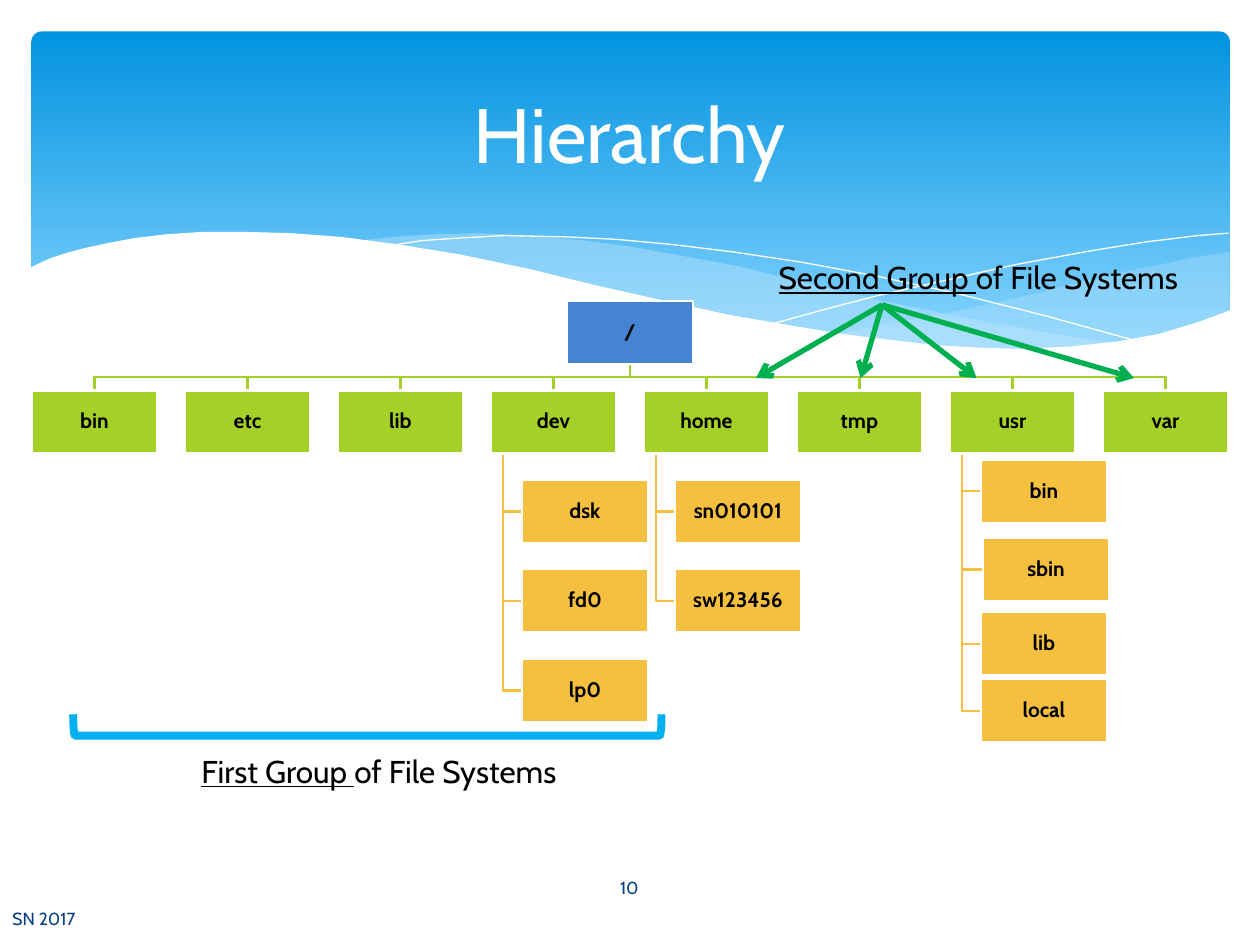
"""Build the file system hierarchy slide."""
from lxml import etree
from pptx import Presentation
from pptx.dml import color
from pptx.enum import shapes, text
from pptx.oxml import ns
from pptx.util import Pt

FONT = "Cabin"
BLACK, WHITE, NAVY = "000000", "FFFFFF", "073E87"
PALE, ROOT, GREEN, AMBER = "C6E7FC", "4584D3", "A5D028", "F5C040"
BRACKET, ARROW = "00B0F0", "00B050"
BOX_W, BOX_H = 72, 36
ROOT_LEFT, ROOT_TOP = 324, 172.1
ROW_LEFT, ROW_TOP, ROW_PITCH = 18, 223.2, 612 / 7
TRUNK_INSET, CHILD_INSET = 7.2, 18

EVEN_TOPS = [274.3, 325.4, 376.6]
DIRECTORIES = {
    "bin": [], "etc": [], "lib": [],
    "dev": list(zip(["dsk", "fd0", "lp0"], EVEN_TOPS)),
    "home": list(zip(["sn010101", "sw123456"], EVEN_TOPS)),
    "tmp": [],
    "usr": [("bin", 262.8), ("sbin", 307.4), ("lib", 349.9), ("local", 388.1)],
    "var": [],
}

RIGHT_SWELL = [
    (702.7, 144), (682.6, 146.9), (663.1, 151.2), (641.5, 155.5), (619.9, 160.6),
    (579.6, 170.6), (542.2, 178.6), (508.3, 185), (475.9, 190.8), (497.5, 193.7),
    (517.7, 195.8), (545, 198.7), (578.2, 200.2), (607.7, 199.4), (634.3, 196.6),
    (657.4, 192.2), (678.2, 186.5), (693.4, 181.4), (702.7, 177.8)]
MIDDLE_SWELL = [
    (643, 196.6), (602.6, 190.8), (558, 182.9), (508.3, 172.8), (452.9, 159.8),
    (420.5, 151.9), (389.5, 146.2), (361.4, 141.1), (334.8, 137.5), (302.4, 134.6),
    (273.6, 133.2), (247.7, 133.9), (225.4, 135.4), (205.9, 137.5), (232.6, 141.1),
    (260.6, 146.2), (290.9, 151.9), (323.3, 159.8), (381.6, 172.8), (432.7, 183.6),
    (468, 190.1), (500.4, 194.4), (529.9, 198), (556.6, 199.4), (581, 200.2),
    (603.4, 200.2), (624.2, 198.7)]
FALLING_CREST = [
    (222.5, 140.4), (241.2, 137.5), (261.4, 136.1), (288.7, 134.6), (324, 135.4),
    (352.1, 136.8), (383.8, 139.7), (419, 144), (457.9, 149.8), (500.4, 157.7),
    (547.2, 167.8), (598.3, 180.7), (653, 195.8)]
RISING_CREST = [
    (441.4, 185), (470.2, 177.1), (500.4, 169.2), (538.6, 160.6), (580.3, 151.2),
    (623.5, 143.3), (655.2, 138.2), (684.7, 134.6), (702, 133.2)]
WHITE_WAVE = [
    (703.4, 177.1), (684, 184.3), (662.4, 190.8), (638.6, 195.1), (612, 198),
    (582.5, 199.4), (560.2, 198.7), (535.7, 197.3), (509.8, 194.4), (481, 190.8),
    (450.7, 185.8), (416.9, 180), (380.9, 172.1), (342, 163.4), (301, 153.4),
    (262.8, 145.4), (227.5, 139.7), (195.1, 135.4), (165.6, 133.2), (139, 132.5),
    (115.9, 132.5), (95, 133.9), (76.3, 136.1), (61.2, 139), (48.2, 141.8),
    (37.4, 144.7), (28.8, 147.6), (20.9, 151.2), (16.6, 153.4), (16.6, 236.9),
    (703.4, 236.9)]


def rgb(value):
    return color.RGBColor.from_string(value)


def write(frame, words, size=12, ink=BLACK, bold=False, align="LEFT",
          anchor="MIDDLE", lead="", spacing=None):
    """Fill a text frame, with an optional underlined lead before the words."""
    frame.vertical_anchor = getattr(text.MSO_ANCHOR, anchor)
    paragraph = frame.paragraphs[0]
    paragraph.alignment = getattr(text.PP_ALIGN, align)
    paragraph.line_spacing = spacing
    for part, underlined in ((lead, True), (words, False)):
        if part:
            run = paragraph.add_run()
            run.text = part
            font = run.font
            font.name, font.size, font.bold = FONT, Pt(size), bold
            font.underline = underlined
            font.color.rgb = rgb(ink)


class Canvas:
    """Hold the slide and draw each kind of element on it."""

    def __init__(self, slide):
        self.slide = slide
        self.shapes = slide.shapes

    def finish(self, shape, fill=None, line=None, weight=1.25, alpha=None):
        shape.shadow.inherit = False
        if fill:
            shape.fill.solid()
            shape.fill.fore_color.rgb = rgb(fill)
        else:
            shape.fill.background()
        if alpha:
            tint = shape.fill._xPr.find(".//" + ns.qn("a:srgbClr"))
            etree.SubElement(tint, ns.qn("a:alpha"), val=str(alpha * 1000))
        if line:
            shape.line.color.rgb = rgb(line)
            shape.line.width = Pt(weight)
        else:
            shape.line.fill.background()
        return shape

    def preset(self, kind, left, top, width, height, **style):
        shape = self.shapes.add_shape(
            getattr(shapes.MSO_SHAPE, kind), Pt(left), Pt(top), Pt(width), Pt(height))
        return self.finish(shape, **style)

    def outline(self, points, close=False, **style):
        start, *rest = [(Pt(x), Pt(y)) for x, y in points]
        builder = self.shapes.build_freeform(*start)
        builder.add_line_segments(rest, close=close)
        return self.finish(builder.convert_to_shape(), **style)

    def box(self, label, left, top, fill):
        frame = self.preset("RECTANGLE", left, top, BOX_W, BOX_H,
                            fill=fill, line=WHITE).text_frame
        frame.margin_left = frame.margin_right = Pt(0.7)
        frame.margin_top = frame.margin_bottom = Pt(0.7)
        frame.word_wrap = True
        write(frame, label, bold=True, align="CENTER", spacing=0.9)

    def caption(self, words, left, top, width, height=29, wrap=True, **style):
        frame = self.shapes.add_textbox(
            Pt(left), Pt(top), Pt(width), Pt(height)).text_frame
        frame.word_wrap = wrap
        write(frame, words, **style)

    def title(self, words, left, top, width, height):
        title = self.shapes.title
        title.left, title.top = Pt(left), Pt(top)
        title.width, title.height = Pt(width), Pt(height)
        write(title.text_frame, words, size=44, ink=WHITE, align="CENTER")
        self.shapes._spTree.append(title._element)

    def arrow(self, start, end):
        ends = [Pt(value) for value in (*start, *end)]
        arrow = self.shapes.add_connector(shapes.MSO_CONNECTOR.STRAIGHT, *ends)
        arrow.line.color.rgb = rgb(ARROW)
        arrow.line.width = Pt(3)
        etree.SubElement(arrow.line._get_or_add_ln(), ns.qn("a:tailEnd"), type="arrow")
        etree.SubElement(arrow._element.spPr, ns.qn("a:effectLst"))


def draw_banner(canvas):
    banner = canvas.preset("ROUNDED_RECTANGLE", 18, 18, 684.7, 194.4)
    banner.adjustments[0] = 0.03
    banner.fill.gradient()
    banner.fill.gradient_angle = 270
    for stop, (place, tint) in zip(banner.fill.gradient_stops,
                                   [(0, "0293E0"), (0.9, "83D3FE")]):
        stop.position, stop.color.rgb = place, rgb(tint)
    canvas.outline(RIGHT_SWELL, close=True, fill=PALE, alpha=29)
    canvas.outline(MIDDLE_SWELL, close=True, fill=PALE, alpha=40)
    for crest in (FALLING_CREST, RISING_CREST):
        canvas.outline(crest, line=WHITE, weight=0)
    canvas.outline(WHITE_WAVE, close=True, fill=WHITE)


def draw_tree(canvas):
    boxes = [("/", ROOT_LEFT, ROOT_TOP, ROOT)]
    root_x, root_bottom = ROOT_LEFT + BOX_W / 2, ROOT_TOP + BOX_H
    for column, (directory, children) in enumerate(DIRECTORIES.items()):
        left = ROW_LEFT + column * ROW_PITCH
        middle, trunk = left + BOX_W / 2, left + TRUNK_INSET
        canvas.outline([(root_x, root_bottom), (root_x, 215.3),
                        (middle, 215.3), (middle, ROW_TOP)], line=GREEN)
        boxes.append((directory, left, ROW_TOP, GREEN))
        for child, top in children:
            child_left = left + CHILD_INSET + (1.2 if child == "sbin" else 0)
            level = top + BOX_H / 2
            canvas.outline([(trunk, ROW_TOP + BOX_H), (trunk, level),
                            (child_left, level)], line=AMBER)
            boxes.append((child, child_left, top, AMBER))
    for box in boxes:
        canvas.box(*box)


def main():
    deck = Presentation()
    deck.slide_width, deck.slide_height = Pt(720), Pt(540)
    canvas = Canvas(deck.slides.add_slide(deck.slide_layouts[5]))
    draw_banner(canvas)
    draw_tree(canvas)
    canvas.caption("10", 314, 492.5, 91.4, size=10, ink=NAVY, align="CENTER")
    canvas.title("Hierarchy", 36, 26.6, 648, 98.6)
    bracket = canvas.preset("RIGHT_BRACKET", 203.8, 246.2, 12.2, 336.2,
                            line=BRACKET, weight=4.5)
    bracket.rotation = 90
    group = dict(size=18, anchor="TOP", wrap=False)
    canvas.caption("of File Systems", 108, 426.2, 218.9, lead="First Group ", **group)
    for target in (432, 491.8, 558, 648):
        canvas.arrow((504, 174.2), (target, 216))
    canvas.caption("of File Systems", 437.8, 144, 242.6, lead="Second Group ", **group)
    canvas.caption("SN 2017", 0, 510.5, 298, size=10, ink=NAVY)
    deck.save("out.pptx")


if __name__ == "__main__":
    main()
